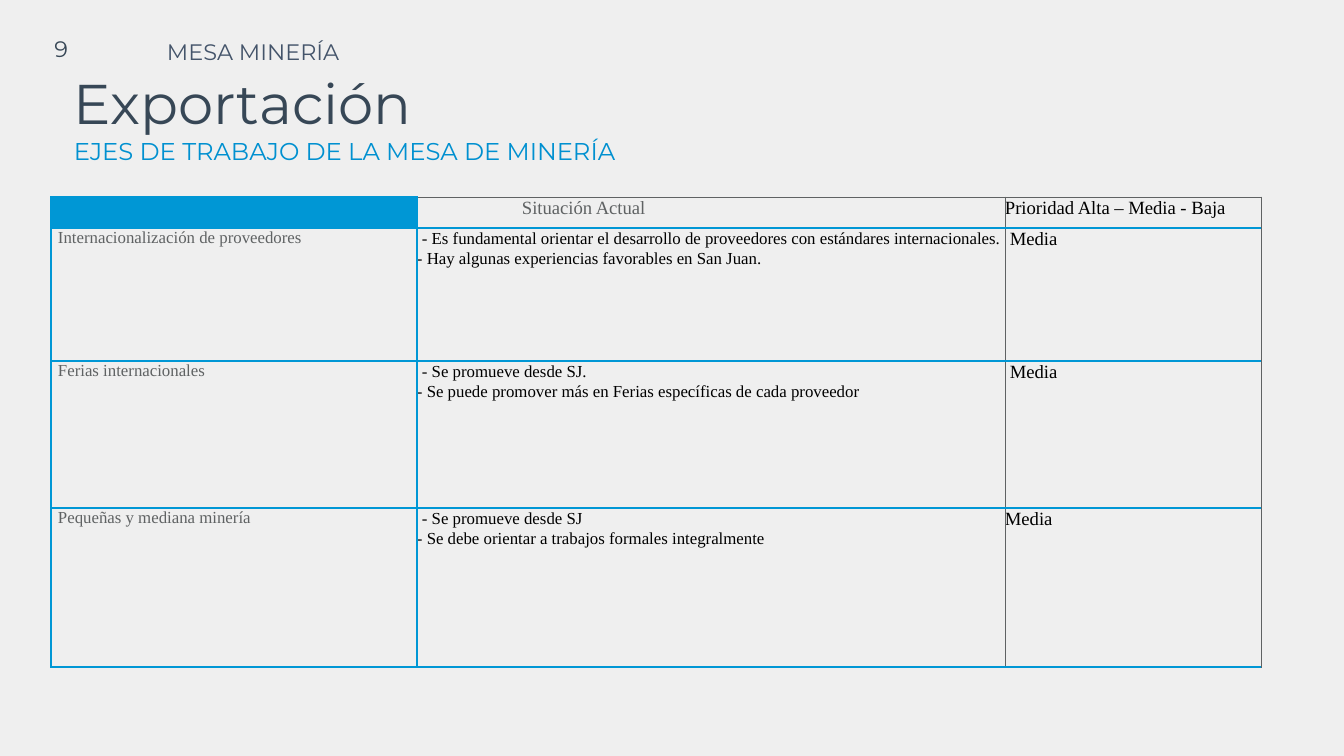
"""Build the export slide of the mining working group."""
from dataclasses import dataclass

from lxml import etree
from pptx import Presentation
from pptx.dml.color import RGBColor
from pptx.enum.text import MSO_ANCHOR, PP_ALIGN
from pptx.oxml.ns import qn
from pptx.util import Pt

SCALE = 9144000 / 1344
LEFT, RIGHT = PP_ALIGN.LEFT, PP_ALIGN.RIGHT
TOP, MIDDLE = MSO_ANCHOR.TOP, MSO_ANCHOR.MIDDLE


@dataclass(frozen=True)
class Theme:
    """Colours, fonts, type sizes and line widths of the slide."""
    background: str = "EFEFEF"
    title: str = "374756"
    section: str = "44546A"
    subtitle: str = "0090D0"
    blue: str = "0097D5"
    grey: str = "5F6263"
    black: str = "000000"
    heading_font: str = "Montserrat"
    table_font: str = "Times New Roman"
    title_size: int = 30
    subtitle_size: int = 13
    section_size: int = 12
    label_size: int = 10
    body_size: int = 9
    thick: float = 1
    thin: float = 0.5


THEME = Theme()
COLUMNS = (366, 588, 256)
ROWS = (31, 133, 147, 159)
NUDGE = 5
TOPICS = (
    ("Internacionalización de proveedores",
     ("- Es fundamental orientar el desarrollo de proveedores con estándares internacionales.",
      "- Hay algunas experiencias favorables en San Juan."), "Media", NUDGE),
    ("Ferias internacionales",
     ("- Se promueve desde SJ.",
      "- Se puede promover más en Ferias específicas de cada proveedor"), "Media", NUDGE),
    ("Pequeñas y mediana minería",
     ("- Se promueve desde SJ",
      "- Se debe orientar a trabajos formales integralmente"), "Media", 0),
)


def px(length):
    """Turn whole pixels into EMU."""
    return round(length * SCALE)


def style_para(para, font, size, color):
    """Format every run of a paragraph."""
    for span in para.runs:
        span.font.name = font
        span.font.size = Pt(size)
        span.font.color.rgb = RGBColor.from_string(color)


def set_margins(target, margin):
    """Give a text frame or a cell the same margin on all sides."""
    target.margin_left = target.margin_right = px(margin)
    target.margin_top = target.margin_bottom = px(margin)


def add_text(page, bounds, lines, margin=7, align=LEFT, anchor=TOP):
    """Add a text box with one (text, size, color) paragraph per line."""
    frame = page.shapes.add_textbox(*map(px, bounds)).text_frame
    frame.word_wrap = True
    frame.vertical_anchor = anchor
    set_margins(frame, margin)
    frame.text = "\n".join(text for text, size, color in lines)
    for para, (text, size, color) in zip(frame.paragraphs, lines):
        para.alignment = align
        style_para(para, THEME.heading_font, size, color)


def set_border(cell, side, color, width):
    """Draw one side of a cell."""
    line = etree.SubElement(cell._tc.get_or_add_tcPr(), qn(f"a:ln{side}"), w=str(Pt(width)))
    fill = etree.SubElement(line, qn("a:solidFill"))
    etree.SubElement(fill, qn("a:srgbClr"), val=color)


def frame_cell(cell, row, column):
    """Draw blue rules, with thin grey ones around the heading and priority cells."""
    grey = (THEME.grey, THEME.thin)
    blue = (THEME.blue, THEME.thick)
    set_border(cell, "L", *(grey if column == 2 else blue))
    set_border(cell, "R", *(grey if column else blue))
    set_border(cell, "T", *(grey if row == 0 and column else blue))
    set_border(cell, "B", *blue)


def fill_cell(cell, lines, size, color, indent=0, spacing=1.07, before=0):
    """Write a cell, with the indent on its first line only."""
    set_margins(cell, 0)
    cell.text_frame.text = "\n".join(lines)
    for para in cell.text_frame.paragraphs:
        para.line_spacing = spacing
        para.space_before = Pt(before)
        style_para(para, THEME.table_font, size, color)
    first = cell.text_frame.paragraphs[0]
    first._p.get_or_add_pPr().set("marL", str(px(indent)))
    if not first.runs:
        etree.SubElement(first._p, qn("a:endParaRPr"), sz=str(size * 100))


def add_topics(page):
    """Add the table of topics, current situation and priority."""
    bounds = (51, 197, sum(COLUMNS), sum(ROWS))
    table = page.shapes.add_table(len(ROWS), len(COLUMNS), *map(px, bounds)).table
    table.first_row = table.horz_banding = False
    for column, width in zip(table.columns, COLUMNS):
        column.width = px(width)
    for row, height in zip(table.rows, ROWS):
        row.height = px(height)
    for row in range(len(ROWS)):
        for column in range(len(COLUMNS)):
            cell = table.cell(row, column)
            frame_cell(cell, row, column)
            cell.fill.background()
    corner = table.cell(0, 0)
    corner.fill.solid()
    corner.fill.fore_color.rgb = RGBColor.from_string(THEME.blue)
    label, body = THEME.label_size, THEME.body_size
    fill_cell(corner, [""], label, THEME.black)
    fill_cell(table.cell(0, 1), ["Situación Actual"], label, THEME.grey, 105, before=1.9)
    fill_cell(table.cell(0, 2), ["Prioridad Alta – Media - Baja"], label, THEME.black, before=1.9)
    for row, (topic, situation, priority, indent) in enumerate(TOPICS, 1):
        fill_cell(table.cell(row, 0), [topic], body, THEME.grey, 7, 1.04, 3)
        fill_cell(table.cell(row, 1), situation, body, THEME.black, NUDGE)
        fill_cell(table.cell(row, 2), [priority], label, THEME.black, indent)


def main():
    """Build and save the deck."""
    deck = Presentation()
    deck.slide_width, deck.slide_height = px(1344), px(756)
    page = deck.slides.add_slide(deck.slide_layouts[6])
    page.background.fill.solid()
    page.background.fill.fore_color.rgb = RGBColor.from_string(THEME.background)
    add_text(page, (67, 62, 851, 109), [
        ("Exportación", THEME.title_size, THEME.title),
        ("EJES DE TRABAJO DE LA MESA DE MINERÍA", THEME.subtitle_size, THEME.subtitle)])
    add_text(page, (26, 23, 55, 52), [("9", THEME.section_size, THEME.title)], 13, RIGHT, MIDDLE)
    add_text(page, (160, 31, 444, 39), [("MESA MINERÍA", THEME.section_size, THEME.section)])
    add_topics(page)
    deck.save("out.pptx")


if __name__ == "__main__":
    main()
